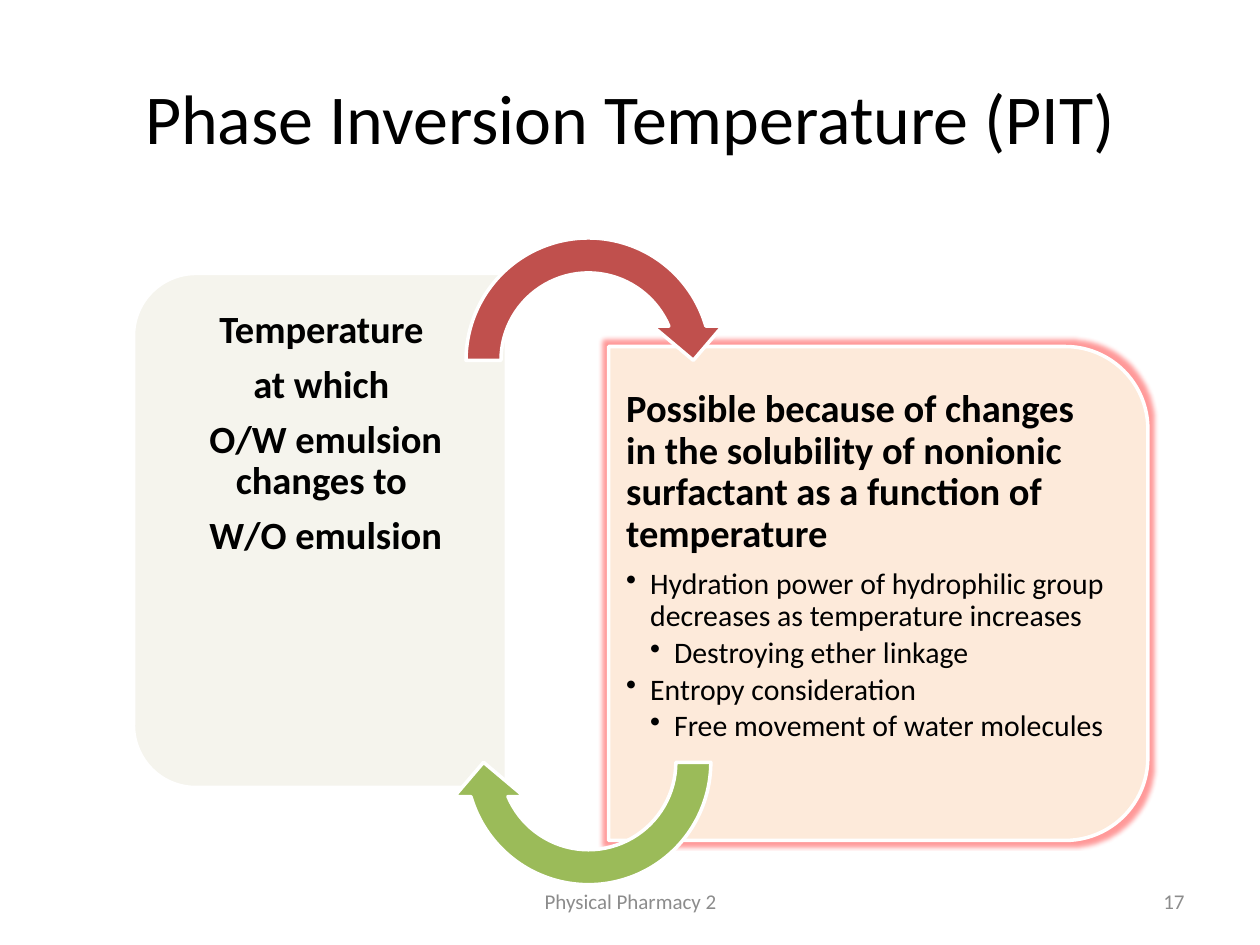
from lxml import etree
from pptx import Presentation
from pptx.dml.color import RGBColor
from pptx.enum.shapes import MSO_SHAPE
from pptx.enum.text import MSO_ANCHOR, PP_ALIGN
from pptx.oxml.ns import qn
from pptx.util import Inches, Pt

PANEL = MSO_SHAPE.ROUND_2_SAME_RECTANGLE
ARROW = MSO_SHAPE.CIRCULAR_ARROW
TOP, MIDDLE = MSO_ANCHOR.TOP, MSO_ANCHOR.MIDDLE
LEFT, CENTER, RIGHT = PP_ALIGN.LEFT, PP_ALIGN.CENTER, PP_ALIGN.RIGHT
COLUMNS, ROWS = 100, 75
FONT = "Calibri"
BLACK, GREY, WHITE = "000000", "8C8C8C", "FFFFFF"
HEAD_SIZE, POINT_SIZE, INDENT = 22, 17, 0.19
ARROW_SIDE = 22.2
ARROW_SHAPE = (0.125, 11.42, 204.58, 108, 0.125)

DEFINITION = ["Temperature ", "at which ", "O/W emulsion changes to ", "W/O emulsion"]
REASON = ("Possible because of changes in the solubility of nonionic "
          "surfactant as a function of temperature")
POINTS = [
    (1, "Hydration power of hydrophilic group decreases as temperature increases"),
    (2, "Destroying ether linkage"),
    (1, "Entropy consideration"),
    (2, "Free movement of water molecules"),
]


def color(value):
    """Turn a hex string into a colour."""
    return RGBColor.from_string(value)


def place(box):
    """Turn a box in columns and rows into slide lengths."""
    return [Inches(cells * 10 / COLUMNS) for cells in box]


def add_text(page, box, lines, size, ink=BLACK, align=CENTER, anchor=MIDDLE,
             bold=False, insets=(0.1, 0.05, 0.1, 0.05)):
    """Add a wrapped text box and return its frame."""
    frame = page.shapes.add_textbox(*place(box)).text_frame
    frame.word_wrap = True
    frame.vertical_anchor = anchor
    (frame.margin_left, frame.margin_top,
     frame.margin_right, frame.margin_bottom) = map(Inches, insets)
    frame.text = "\n".join(lines)
    for para in frame.paragraphs:
        para.alignment = align
        for span in para.runs:
            span.font.name = FONT
            span.font.size = Pt(size)
            span.font.bold = bold
            span.font.color.rgb = color(ink)
    return frame


def space_lines(para, size, share):
    """Tighten the lines and leave a share of the size after the paragraph."""
    para.line_spacing = 0.9
    para.space_after = Pt(size * share)


def add_bullet(para, level):
    """Give a paragraph a hanging bullet at its level."""
    props = para._p.get_or_add_pPr()
    props.set("marL", str(Inches(INDENT * level)))
    props.set("indent", str(-Inches(INDENT)))
    etree.SubElement(props, qn("a:buChar")).set("char", "•")


def add_figure(page, kind, box, fill, turn, shape):
    """Add a white-edged preset shape."""
    figure = page.shapes.add_shape(kind, *place(box))
    figure.rotation = turn
    for index, value in enumerate(shape):
        figure.adjustments[index] = value
    figure.shadow.inherit = False
    figure.fill.solid()
    figure.fill.fore_color.rgb = color(fill)
    figure.line.color.rgb = color(WHITE)
    figure.line.width = Pt(2)
    return figure


def add_panel(page, box, fill, turn):
    """Add a panel turned a quarter so that it covers the given box."""
    left, top, width, height = box
    shift = (width - height) / 2
    turned = (left + shift, top - shift, height, width)
    return add_figure(page, PANEL, turned, fill, turn, (0.167, 0))


def add_glow(figure, ink, radius, opacity):
    """Add a soft glow around a shape."""
    effects = figure._element.spPr.find(qn("a:effectLst"))
    glow = etree.SubElement(effects, qn("a:glow"), rad=str(Pt(radius)))
    tint = etree.SubElement(glow, qn("a:srgbClr"), val=ink)
    etree.SubElement(tint, qn("a:alpha"), val=str(opacity * 1000))


def add_definition(page, box):
    """Add the left panel with the definition."""
    left, top, width, height = box
    add_panel(page, box, "F5F4ED", 270)
    frame = add_text(page, (left + 1.4, top + 1.4, width - 1.4, height - 2.9),
                     DEFINITION, HEAD_SIZE, anchor=TOP, bold=True,
                     insets=(0.09, 0.15, 0.14, 0.15))
    for para in frame.paragraphs:
        space_lines(para, HEAD_SIZE, 0.35)


def add_reason(page, box):
    """Add the glowing right panel with the reason and its points."""
    left, top, width, height = box
    add_glow(add_panel(page, box, "FDEADA", 90), "FF0000", 5, 40)
    frame = add_text(page, (left, top + 1.9, width - 2, height - 3.9),
                     [REASON] + [text for _, text in POINTS], HEAD_SIZE,
                     align=LEFT, anchor=TOP, bold=True,
                     insets=(0.14, 0.15, 0.09, 0.15))
    head, *points = frame.paragraphs
    space_lines(head, HEAD_SIZE, 0.35)
    for para, (level, _) in zip(points, POINTS):
        para.level = level
        space_lines(para, POINT_SIZE, 0.15)
        add_bullet(para, level)
        for span in para.runs:
            span.font.size = Pt(POINT_SIZE)
            span.font.bold = False


def add_cycle(page, box):
    """Add the two arrows at the top and bottom of a box."""
    left, top, _, height = box
    bottom = top + height - ARROW_SIDE
    for row, fill, turn in ((top, "C0504D", 0), (bottom, "9BBB59", 180)):
        add_figure(page, ARROW, (left, row, ARROW_SIDE, ARROW_SIDE),
                   fill, turn, ARROW_SHAPE)


def add_footer(page, box):
    """Add the course name and the page number."""
    left, top, width, height = box
    add_text(page, (left, top, 31.7, height), ["Physical Pharmacy 2"], 12, GREY)
    add_text(page, (left + width - 23.3, top, 23.3, height), ["17"], 12, GREY, RIGHT)


def main():
    """Build and save the slide."""
    deck = Presentation()
    deck.slide_width, deck.slide_height = place((COLUMNS, ROWS))
    page = deck.slides.add_slide(deck.slide_layouts[6])
    add_text(page, (5, 3, 90, 12.5), ["Phase Inversion Temperature (PIT)"], 40)
    add_footer(page, (34.2, 69.5, 60.8, 4))
    add_definition(page, (10.6, 21.7, 29.6, 40.8))
    add_reason(page, (48.3, 27.5, 42.8, 39.2))
    add_cycle(page, (35.6, 17.5, ARROW_SIDE, 54.1))
    deck.save("out.pptx")


if __name__ == "__main__":
    main()
